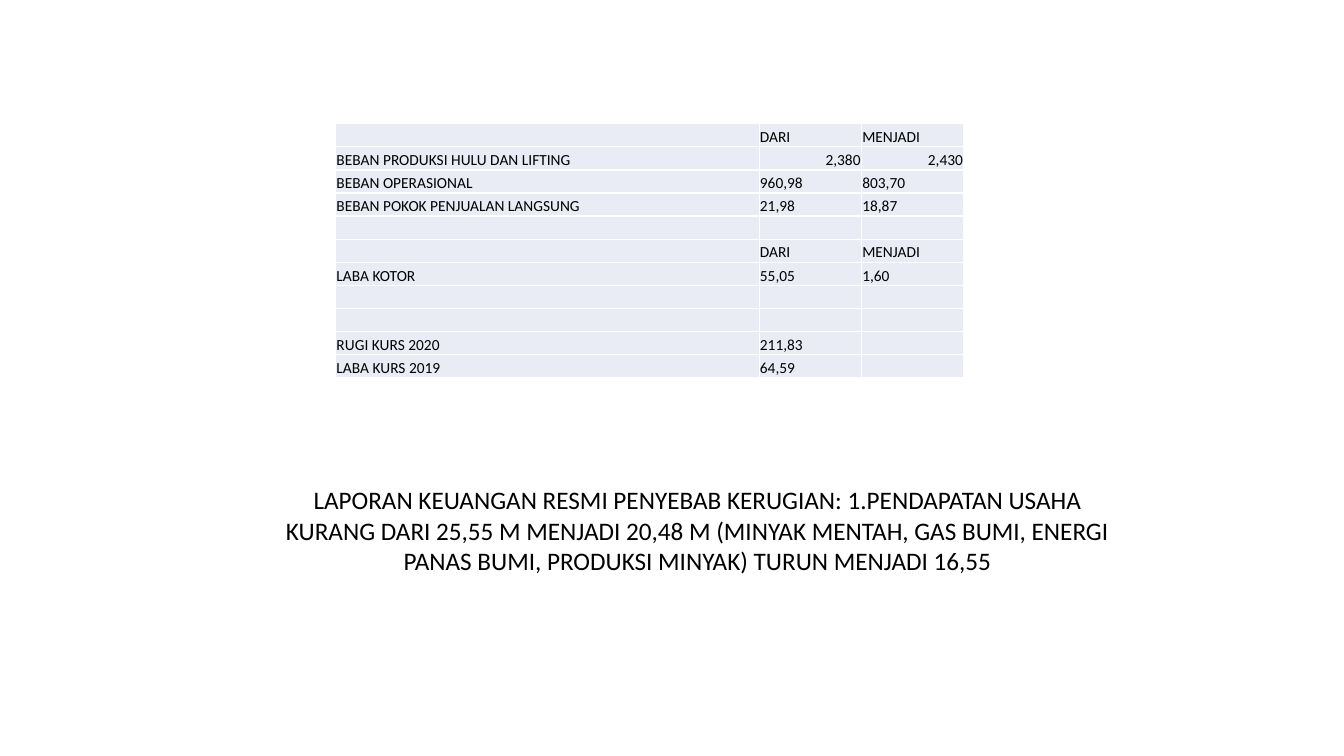
"""Build the slide with the expense and exchange-rate table and its explanation."""
from lxml.etree import SubElement
from pptx import Presentation
from pptx.dml.color import RGBColor
from pptx.enum.text import MSO_ANCHOR as Anchor, MSO_AUTO_SIZE as AutoSize, PP_ALIGN as Align
from pptx.oxml.ns import qn
from pptx.util import Cm, Pt


def paint(color_format, color):
    color_format.rgb = RGBColor.from_string(color)


def write(para, text, size, align):
    para.alignment = align
    span = para.add_run()
    span.text = text
    for name, value in {"name": "Calibri", "size": Pt(size)}.items():
        setattr(span.font, name, value)
    paint(span.font.color, "000000")


deck = Presentation()
deck.slide_width, deck.slide_height = Cm(33.87), Cm(19.05)
slide = deck.slides.add_slide(deck.slide_layouts[6])

box = slide.shapes.add_textbox(Cm(6.58), Cm(12.09), Cm(22), Cm(2.57))
frame = box.text_frame
frame.word_wrap = True
frame.auto_size = AutoSize.SHAPE_TO_FIT_TEXT
explanation = (
    "LAPORAN KEUANGAN RESMI PENYEBAB KERUGIAN: 1.PENDAPATAN USAHA KURANG DARI "
    "25,55 M MENJADI 20,48 M (MINYAK MENTAH, GAS BUMI, ENERGI PANAS BUMI, "
    "PRODUKSI MINYAK) TURUN MENJADI 16,55"
)
write(frame.paragraphs[0], explanation, 18, Align.CENTER)

headings = ("", "DARI", "MENJADI")
blank = ("", "", "")
rows = [
    headings,
    ("BEBAN PRODUKSI HULU DAN LIFTING", "2,380", "2,430"),
    ("BEBAN OPERASIONAL", "960,98", "803,70"),
    ("BEBAN POKOK PENJUALAN LANGSUNG", "21,98", "18,87"),
    blank,
    headings,
    ("LABA KOTOR", "55,05", "1,60"),
    blank,
    blank,
    ("RUGI KURS 2020", "211,83", ""),
    ("LABA KURS 2019", "64,59", ""),
]
right_aligned = {"2,380", "2,430"}
column_widths = [10.67, 2.58, 2.58]
table_height = 6.4

table = slide.shapes.add_table(
    len(rows), len(column_widths), Cm(8.46), Cm(3.12), Cm(sum(column_widths)), Cm(table_height)
).table
table.first_row = table.horz_banding = False
for column, width in zip(table.columns, column_widths):
    column.width = Cm(width)
for row in table.rows:
    row.height = Cm(table_height / len(rows))

cell_format = {
    "vertical_anchor": Anchor.BOTTOM,
    "margin_left": Cm(0.02),
    "margin_right": Cm(0.02),
    "margin_top": Cm(0.02),
    "margin_bottom": Cm(0),
}
for row, texts in zip(table.rows, rows):
    for cell, text in zip(row.cells, texts):
        for name, value in cell_format.items():
            setattr(cell, name, value)
        properties = cell._tc.get_or_add_tcPr()
        for side in ("a:lnL", "a:lnR", "a:lnT", "a:lnB"):
            line = SubElement(properties, qn(side), w=str(Pt(1)))
            SubElement(SubElement(line, qn("a:solidFill")), qn("a:srgbClr"), val="FFFFFF")
        cell.fill.solid()
        paint(cell.fill.fore_color, "E9EBF5")
        para = cell.text_frame.paragraphs[0]
        if text:
            write(para, text, 11, Align.RIGHT if text in right_aligned else Align.LEFT)
        else:
            SubElement(para._p, qn("a:endParaRPr"), sz="1100")

deck.save("out.pptx")
